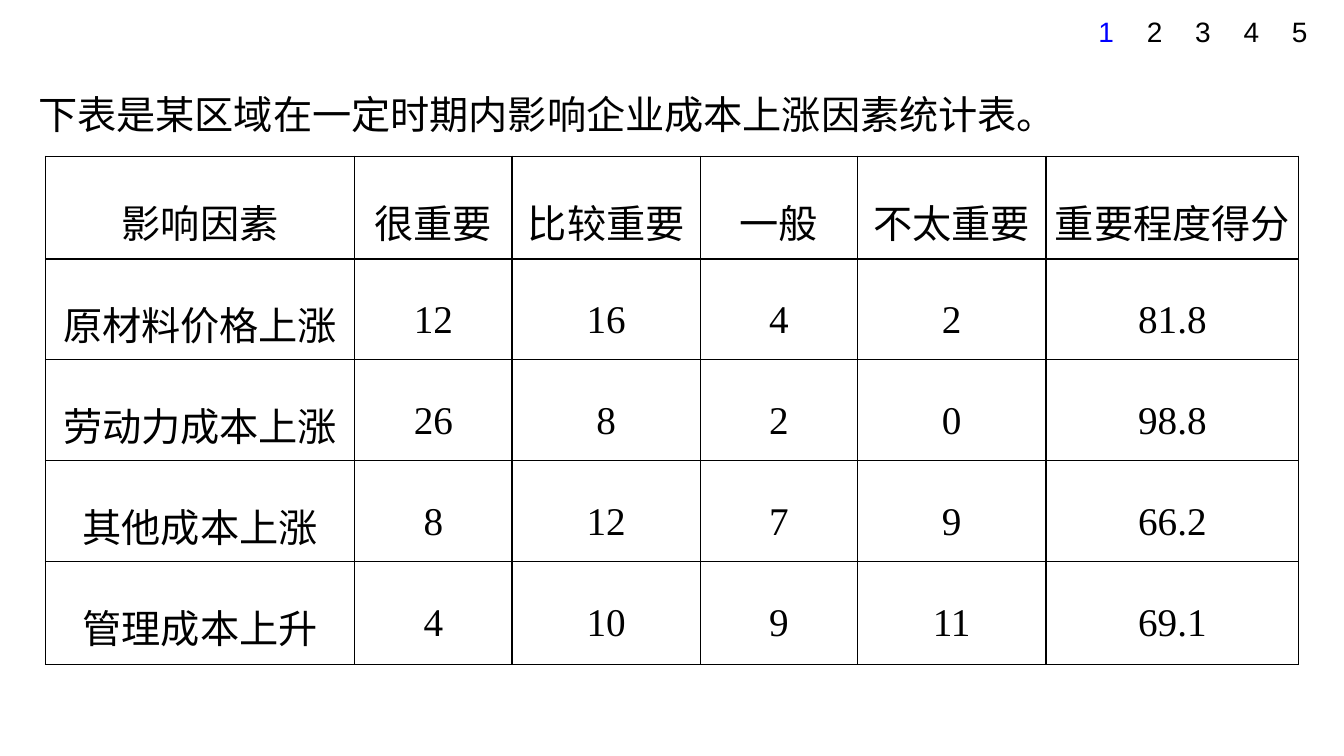
from lxml.etree import SubElement
from pptx import Presentation
from pptx.dml.color import RGBColor
from pptx.enum.text import MSO_ANCHOR, PP_ALIGN
from pptx.oxml.ns import qn
from pptx.util import Pt

BLACK = RGBColor(0x00, 0x00, 0x00)
BLUE = RGBColor(0x00, 0x00, 0xFF)

INTRODUCTION = "下表是某区域在一定时期内影响企业成本上涨因素统计表。"
COST_FACTORS = [
    ["影响因素", "很重要", "比较重要", "一般", "不太重要", "重要程度得分"],
    ["原材料价格上涨", "12", "16", "4", "2", "81.8"],
    ["劳动力成本上涨", "26", "8", "2", "0", "98.8"],
    ["其他成本上涨", "8", "12", "7", "9", "66.2"],
    ["管理成本上升", "4", "10", "9", "11", "69.1"],
]
COLUMN_WIDTHS = [221, 112.3, 134.6, 112.3, 134.6, 180.6]
ROW_HEIGHTS = [73.4, 72, 72, 72, 73.4]
PAGE_COUNT = 5
CURRENT_PAGE = 1
PAGE_LEFT = 774.7
PAGE_STEP = 34.56


class SlideBuilder:
    body_font = "Times New Roman"
    body_size = 28
    page_font = "Arial"
    page_size = 20
    body_spacing = 1.5
    border_width = 1

    def __init__(self, slide):
        self.slide = slide

    def set_text(self, text_frame, text, font, size, color, alignment, spacing=None):
        text_frame.text = text
        paragraph = text_frame.paragraphs[0]
        paragraph.alignment = alignment
        paragraph.line_spacing = spacing
        for run in paragraph.runs:
            run.font.name = font
            run.font.size = Pt(size)
            run.font.color.rgb = color

    def add_text_box(self, left, top, width, height):
        shape = self.slide.shapes.add_textbox(Pt(left), Pt(top), Pt(width), Pt(height))
        return shape.text_frame

    def add_introduction(self, text, left, top, width, height):
        text_frame = self.add_text_box(left, top, width, height)
        text_frame.word_wrap = True
        self.set_text(text_frame, text, self.body_font, self.body_size, BLACK,
                      PP_ALIGN.JUSTIFY, self.body_spacing)

    def add_page_number(self, number, left, top, width, height, color):
        text_frame = self.add_text_box(left, top, width, height)
        text_frame.word_wrap = False
        text_frame.vertical_anchor = MSO_ANCHOR.MIDDLE
        text_frame.margin_left = text_frame.margin_right = Pt(9.4)
        text_frame.margin_top = text_frame.margin_bottom = Pt(5)
        self.set_text(text_frame, str(number), self.page_font, self.page_size, color,
                      PP_ALIGN.CENTER)

    def add_borders(self, cell):
        properties = cell._tc.get_or_add_tcPr()
        for side in ("a:lnL", "a:lnR", "a:lnT", "a:lnB"):
            line = SubElement(properties, qn(side), w=str(Pt(self.border_width)))
            fill = SubElement(line, qn("a:solidFill"))
            SubElement(fill, qn("a:srgbClr"), val=str(BLACK))

    def add_table(self, rows, left, top, column_widths, row_heights):
        table = self.slide.shapes.add_table(
            len(rows), len(column_widths), Pt(left), Pt(top),
            Pt(sum(column_widths)), Pt(sum(row_heights))).table
        table.first_row = False
        table.horz_banding = False
        for column, width in zip(table.columns, column_widths):
            column.width = Pt(width)
        for row, height, texts in zip(table.rows, row_heights, rows):
            row.height = Pt(height)
            for cell, text in zip(row.cells, texts):
                self.fill_cell(cell, text)

    def fill_cell(self, cell, text):
        cell.vertical_anchor = MSO_ANCHOR.MIDDLE
        cell.margin_left = cell.margin_right = Pt(5)
        cell.margin_top = cell.margin_bottom = Pt(0)
        self.add_borders(cell)
        cell.fill.background()
        self.set_text(cell.text_frame, text, self.body_font, self.body_size, BLACK,
                      PP_ALIGN.CENTER, self.body_spacing)


def main():
    presentation = Presentation()
    presentation.slide_width = Pt(960)
    presentation.slide_height = Pt(540)
    blank_layout = presentation.slide_layouts.get_by_name("Blank")
    builder = SlideBuilder(presentation.slides.add_slide(blank_layout))
    builder.add_introduction(INTRODUCTION, 20.2, 43.9, 916.6, 58.3)
    builder.add_table(COST_FACTORS, 32.4, 111.6, COLUMN_WIDTHS, ROW_HEIGHTS)
    for number in range(1, PAGE_COUNT + 1):
        left = PAGE_LEFT + (number - 1) * PAGE_STEP
        color = BLUE if number == CURRENT_PAGE else BLACK
        builder.add_page_number(number, left, 0, 31, 45.4, color)
    presentation.save("out.pptx")


if __name__ == "__main__":
    main()
